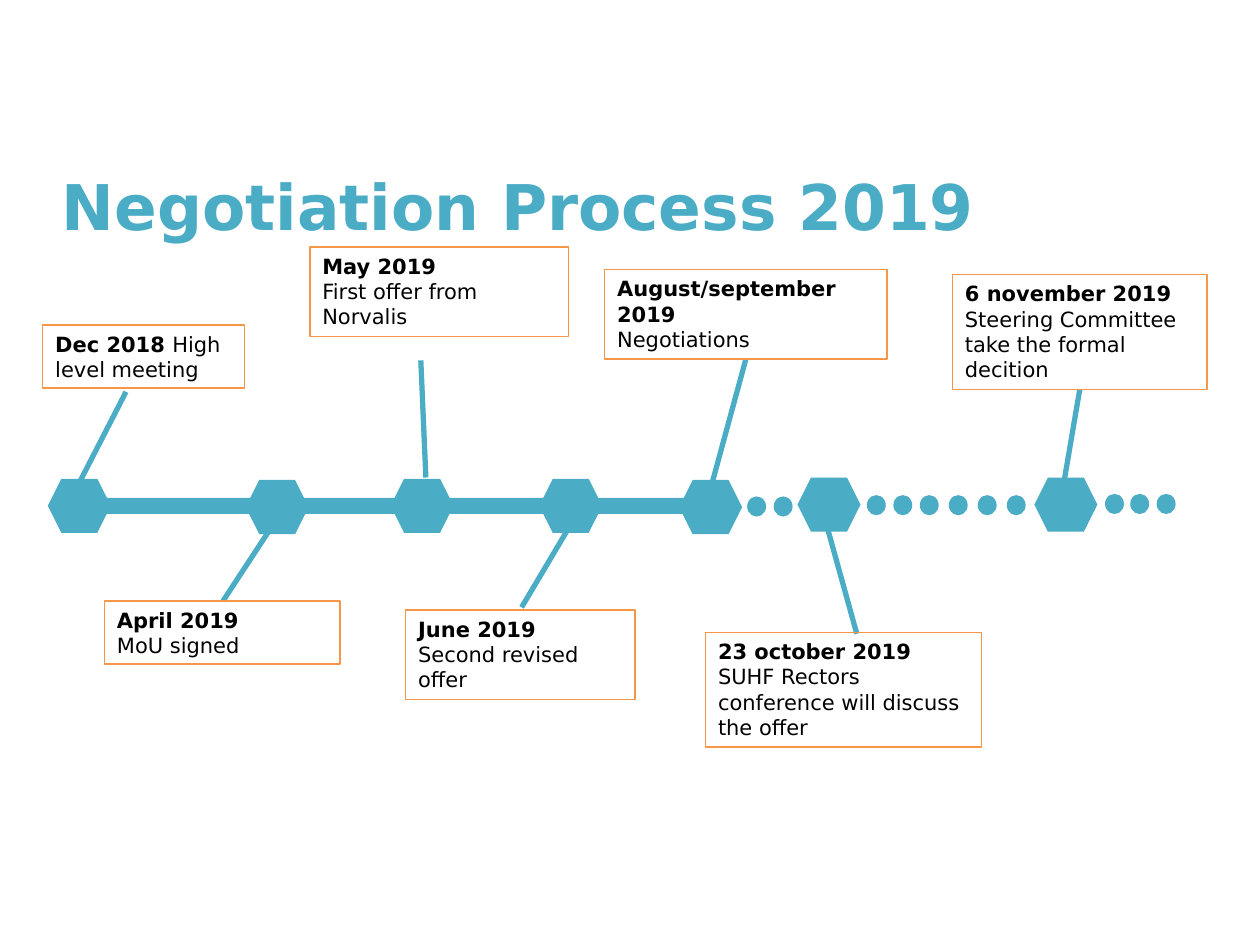
from dataclasses import dataclass

from lxml.etree import SubElement
from pptx import Presentation
from pptx.dml.color import RGBColor
from pptx.enum.shapes import MSO_CONNECTOR as Connector, MSO_SHAPE as Shape
from pptx.enum.text import MSO_ANCHOR as Anchor, MSO_AUTO_SIZE as AutoSize, PP_ALIGN as Align
from pptx.oxml.ns import qn
from pptx.util import Inches, Pt


@dataclass(frozen=True)
class Theme:
    font: str = "DejaVu Sans"
    accent: RGBColor = RGBColor(0x4B, 0xAC, 0xC6)
    border: RGBColor = RGBColor(0xF7, 0x96, 0x46)
    ink: RGBColor = RGBColor(0, 0, 0)
    title_size: int = 36
    label_size: int = 12
    border_width: float = 0.75
    pointer_width: float = 3


THEME = Theme()

HEXAGONS = [(0.38, 3.8), (1.95, 3.81), (3.1, 3.8), (4.28, 3.8),
            (5.39, 3.81), (6.33, 3.79), (8.21, 3.79)]

DOT_ROWS = [
    (3.94, [5.93, 6.14]),
    (3.93, [6.88, 7.09, 7.3, 7.53, 7.76, 7.99]),
    (3.92, [8.77, 8.97, 9.18]),
]

POINTERS = [
    ((1, 3.11), (0.63, 3.83)),
    ((2.19, 4.13), (1.77, 4.77)),
    ((3.34, 2.86), (3.38, 3.79)),
    ((4.52, 4.18), (4.14, 4.82)),
    ((5.92, 2.85), (5.65, 3.84)),
    ((6.57, 4.2), (6.8, 5.03)),
    ((8.57, 3.09), (8.43, 3.91)),
]

EVENTS = [
    ((0.34, 2.58, 1.6, 0.5), "Dec 2018 ", "same line", "High level meeting"),
    ((0.83, 4.77, 1.87, 0.5), "April 2019 ", "line", "MoU signed"),
    ((2.46, 1.96, 2.05, 0.71), "May 2019", "paragraph", "First offer from Norvalis"),
    ((3.22, 4.84, 1.82, 0.71), "June 2019", "line", "Second revised offer"),
    ((4.8, 2.14, 2.24, 0.71), "August/september 2019", "paragraph", "Negotiations"),
    ((5.6, 5.02, 2.19, 0.91), "23 october 2019", "line",
     "SUHF Rectors conference will discuss the offer"),
    ((7.56, 2.18, 2.02, 0.91), "6 november 2019", "line",
     "Steering Committee take the formal decition"),
]


def add_text(para, text, size=THEME.label_size, color=THEME.ink, bold=False):
    para.alignment = Align.LEFT
    span = para.add_run()
    span.text = text
    span.font.name = THEME.font
    span.font.size = Pt(size)
    span.font.bold = bold
    span.font.color.rgb = color


def add_title(page, text):
    box = page.shapes.add_textbox(Inches(0.42), Inches(1.23), Inches(7.99), Inches(0.4))
    frame = box.text_frame
    frame.word_wrap = True
    frame.margin_left = Inches(0.07)
    frame.margin_top = Inches(0.1)
    add_text(frame.paragraphs[0], text, size=THEME.title_size, color=THEME.accent, bold=True)


def add_solid(page, kind, left, top, width, height):
    shape = page.shapes.add_shape(kind, Inches(left), Inches(top), Inches(width), Inches(height))
    shape.shadow.inherit = False
    shape.fill.solid()
    shape.fill.fore_color.rgb = THEME.accent
    shape.line.fill.background()


def add_pointer(page, start, end):
    line = page.shapes.add_connector(Connector.STRAIGHT, *map(Inches, start + end))
    line.line.color.rgb = THEME.accent
    line.line.width = Pt(THEME.pointer_width)
    SubElement(line.element.spPr, qn("a:effectLst"))


def add_event(page, place, date, separator, detail):
    box = page.shapes.add_shape(Shape.RECTANGLE, *map(Inches, place))
    box.shadow.inherit = False
    box.fill.background()
    box.line.color.rgb = THEME.border
    box.line.width = Pt(THEME.border_width)
    frame = box.text_frame
    frame.word_wrap = True
    frame.auto_size = AutoSize.SHAPE_TO_FIT_TEXT
    frame.vertical_anchor = Anchor.TOP
    para = frame.paragraphs[0]
    add_text(para, date, bold=True)
    if separator == "paragraph":
        para = frame.add_paragraph()
    elif separator == "line":
        para.add_line_break()
    add_text(para, detail)


def main():
    deck = Presentation()
    deck.slide_width, deck.slide_height = Inches(10), Inches(7.5)
    page = deck.slides.add_slide(deck.slide_layouts[6])
    add_title(page, "Negotiation Process 2019")
    add_solid(page, Shape.RIGHT_ARROW, 0.42, 3.89, 5.4, 0.25)
    for left, top in HEXAGONS:
        add_solid(page, Shape.HEXAGON, left, top, 0.5, 0.43)
    for start, end in POINTERS:
        add_pointer(page, start, end)
    for event in EVENTS:
        add_event(page, *event)
    for top, lefts in DOT_ROWS:
        for left in lefts:
            add_solid(page, Shape.OVAL, left, top, 0.15, 0.16)
    deck.save("out.pptx")


if __name__ == "__main__":
    main()
